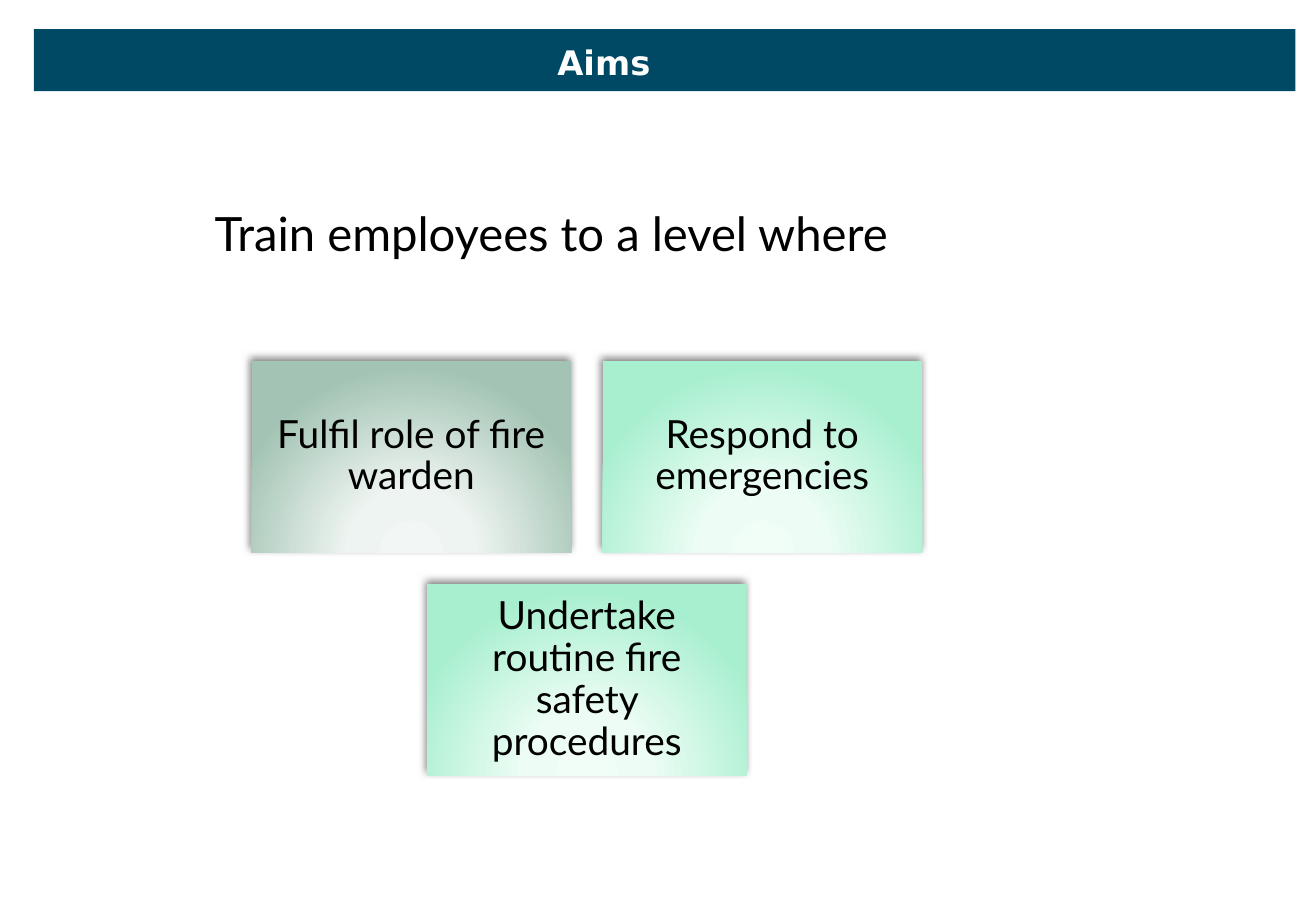
from dataclasses import dataclass

from pptx import Presentation
from pptx import oxml
from pptx import util as u
from pptx.dml import color
from pptx.enum import shapes, text
from pptx.oxml import ns


@dataclass(frozen=True)
class Theme:
    """Colours, fonts and type sizes of the slide."""
    bar: str = "004964"
    white: str = "FFFFFF"
    black: str = "000000"
    sage: tuple = ("F2F7F5", "EEF4F1", "A3C4B4")
    mint: tuple = ("F1FEF8", "EDFDF5", "A8EFCF")
    heading_font: str = "DejaVu Sans"
    body_font: str = "Lato"
    heading_size: int = 20
    intro_size: int = 28
    card_size: int = 23


def write(frame, words, *, font, size, colour, bold=False, align=None, spacing=None):
    """Write one formatted paragraph into a text frame."""
    paragraph = frame.paragraphs[0]
    paragraph.alignment = align
    paragraph.line_spacing = spacing
    run = paragraph.add_run()
    run.text = words
    run.font.name = font
    run.font.size = u.Pt(size)
    run.font.bold = bold
    run.font.color.rgb = color.RGBColor.from_string(colour)


def radial_fill(colours):
    """Return a circular gradient centred below the shape."""
    stops = "".join(
        f'<a:gs pos="{position}"><a:srgbClr val="{colour}"/></a:gs>'
        for position, colour in zip((0, 34000, 100000), colours))
    return oxml.parse_xml(
        f'<a:gradFill {ns.nsdecls("a")} rotWithShape="1"><a:gsLst>{stops}</a:gsLst>'
        '<a:path path="circle"><a:fillToRect l="50000" t="155000" r="50000" b="-55000"/>'
        '</a:path></a:gradFill>')


def soft_shadow(colour):
    """Return a half-transparent shadow that falls up and to the left."""
    return oxml.parse_xml(
        f'<a:outerShdw {ns.nsdecls("a")} blurRad="{u.Pt(5)}" dist="{u.Pt(2)}" '
        f'dir="{245 * 60000}" rotWithShape="0"><a:srgbClr val="{colour}">'
        '<a:alpha val="50000"/></a:srgbClr></a:outerShdw>')


class SlideBuilder:
    """Draw the elements of a slide in one theme."""

    def __init__(self, slide, theme):
        self.slide = slide
        self.theme = theme

    def rectangle(self, left, top, width, height):
        """Add a plain rectangle without outline or shadow."""
        shape = self.slide.shapes.add_shape(
            shapes.MSO_SHAPE.RECTANGLE, *map(u.Cm, (left, top, width, height)))
        shape.shadow.inherit = False
        shape.line.fill.background()
        return shape

    def bar(self, *box):
        """Add the solid heading bar."""
        shape = self.rectangle(*box)
        shape.fill.solid()
        shape.fill.fore_color.rgb = color.RGBColor.from_string(self.theme.bar)

    def label(self, words, *box, wrap=True, **style):
        """Add a text box."""
        frame = self.slide.shapes.add_textbox(*map(u.Cm, box)).text_frame
        frame.word_wrap = wrap
        frame.auto_size = text.MSO_AUTO_SIZE.SHAPE_TO_FIT_TEXT
        write(frame, words, **style)

    def card(self, words, colours, *box):
        """Add a gradient card with centred text."""
        shape = self.rectangle(*box)
        shape.fill.background()
        properties = shape.element.spPr
        properties.replace(properties.find(ns.qn("a:noFill")), radial_fill(colours))
        properties.find(ns.qn("a:effectLst")).append(soft_shadow(self.theme.black))
        frame = shape.text_frame
        frame.word_wrap = True
        frame.vertical_anchor = text.MSO_ANCHOR.MIDDLE
        frame.margin_left = frame.margin_right = u.Cm(0.25)
        frame.margin_top = frame.margin_bottom = u.Cm(0.25)
        write(frame, words, font=self.theme.body_font, size=self.theme.card_size,
              colour=self.theme.black, align=text.PP_ALIGN.CENTER, spacing=0.9)


def main():
    """Build the Aims slide."""
    presentation = Presentation()
    presentation.slide_width, presentation.slide_height = u.Cm(27.51), u.Cm(19.05)
    theme = Theme()
    builder = SlideBuilder(presentation.slides.add_slide(presentation.slide_layouts[6]), theme)

    builder.bar(0.71, 0.61, 26.37, 1.3)
    builder.label("Train employees to a level where", 4.24, 4.14, 17.68, 1.45,
                  font=theme.body_font, size=theme.intro_size, colour=theme.black)

    width, height, gap = 6.68, 4.01, 0.66
    first_left, first_top = 5.26, 7.54
    cards = (
        ("Fulfil role of fire warden", theme.sage, 0, 0),
        ("Respond to emergencies", theme.mint, 1, 0),
        ("Undertake routine fire safety procedures", theme.mint, 0.5, 1),
    )
    for words, colours, column, row in cards:
        builder.card(words, colours, first_left + column * (width + gap),
                     first_top + row * (height + gap), width, height)

    builder.label("Aims", 11.38, 0.74, 2.49, 1.12, wrap=False, font=theme.heading_font,
                  size=theme.heading_size, colour=theme.white, bold=True,
                  align=text.PP_ALIGN.CENTER)
    presentation.save("out.pptx")


if __name__ == "__main__":
    main()
